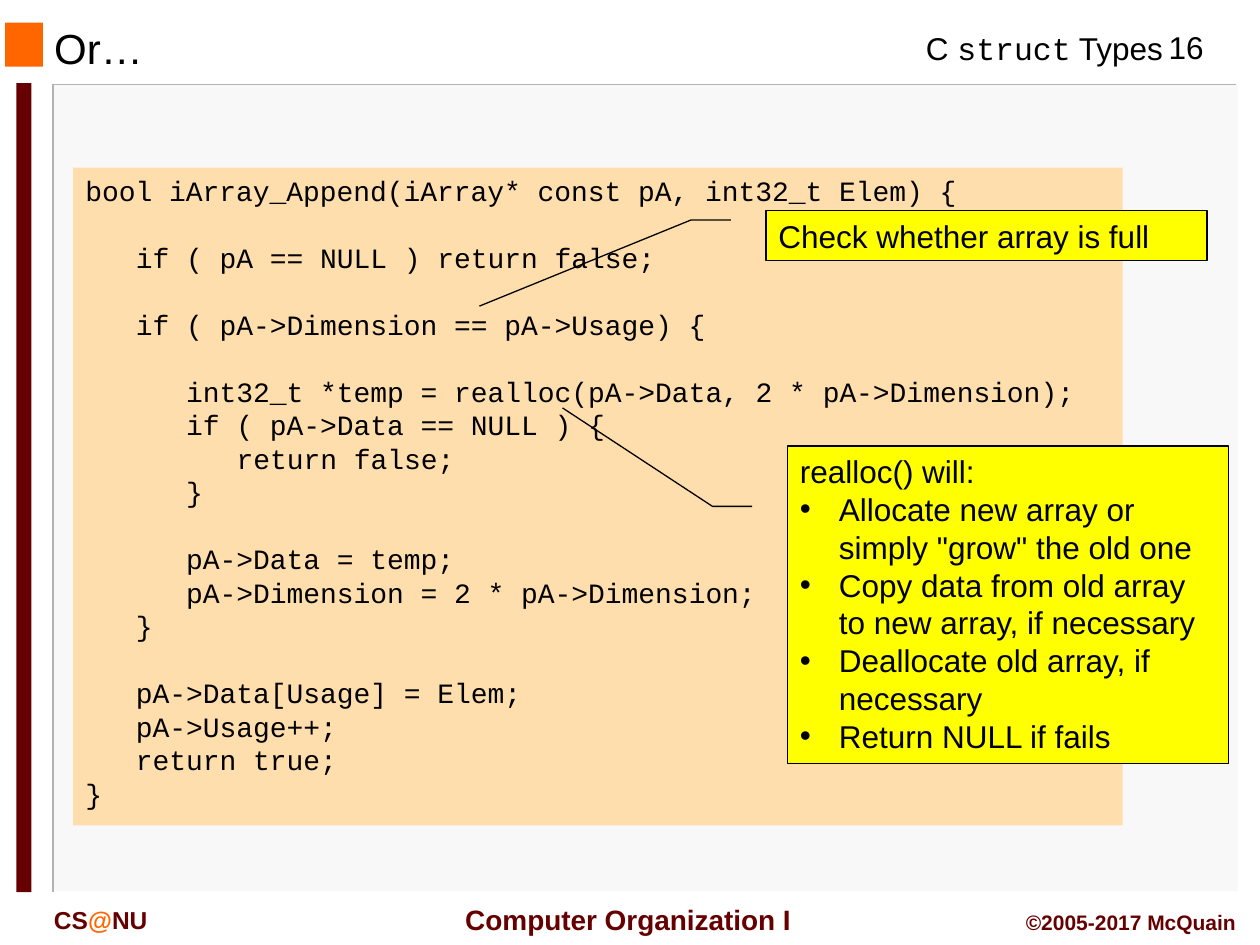
from dataclasses import dataclass

from pptx import Presentation
from pptx import util as u
from pptx.dml.color import RGBColor
from pptx.enum import shapes, text
from pptx.oxml.ns import qn
from lxml import etree

PX = u.Inches(1) // 100

BLACK = RGBColor(0x00, 0x00, 0x00)
WHITE = RGBColor(0xFF, 0xFF, 0xFF)
PANEL = RGBColor(0xF8, 0xF8, 0xF8)
GRAY = RGBColor(0xB2, 0xB2, 0xB2)
ORANGE = RGBColor(0xFF, 0x66, 0x00)
MAROON = RGBColor(0x66, 0x00, 0x00)
PEACH = RGBColor(0xFF, 0xDE, 0xAD)
YELLOW = RGBColor(0xFF, 0xFF, 0x00)

SANS = "Arial"
MONO = "Courier New"
LEFT, CENTER, RIGHT = text.PP_ALIGN.LEFT, text.PP_ALIGN.CENTER, text.PP_ALIGN.RIGHT
TOP, MIDDLE = text.MSO_ANCHOR.TOP, text.MSO_ANCHOR.MIDDLE
CODE_INDENT = 40
CODE_GAP = 19
BULLET_INDENT = 31


@dataclass(frozen=True)
class Box:
    left: int
    top: int
    width: int
    height: int

    def emu(self) -> tuple[int, ...]:
        return tuple(v * PX for v in (self.left, self.top, self.width, self.height))


@dataclass(frozen=True)
class Run:
    words: str
    font: str | None = None
    color: RGBColor | None = None


@dataclass(frozen=True)
class Line:
    runs: tuple[Run, ...]
    indent: int = 0
    gap: int = 0
    bullet: bool = False


@dataclass(frozen=True)
class Label:
    box: Box
    runs: tuple[Run, ...]
    size: int
    color: RGBColor = BLACK
    bold: bool = False
    align: text.PP_ALIGN = LEFT
    anchor: text.MSO_ANCHOR = TOP
    wrap: bool = True


@dataclass(frozen=True)
class Callout:
    box: Box
    target: tuple[float, float]
    lines: tuple[Line, ...]


def plain(words: str, **layout) -> Line:
    return Line((Run(words),), **layout)


def code(level: int, words: str, gap: int = 0) -> Line:
    return plain(words, indent=level * CODE_INDENT, gap=gap)


def bullet(words: str) -> Line:
    return plain(words, indent=BULLET_INDENT, bullet=True)


FRAMES = (
    (GRAY, ((981, 67), (42, 67), (42, 708))),
    (WHITE, ((983, 67), (983, 708), (44, 708))),
)
BLOCKS = (
    (Box(4, 18, 30, 35), ORANGE),
    (Box(13, 66, 12, 642), MAROON),
)
LABELS = (
    Label(Box(725, 18, 210, 40), (Run("C "), Run("struct", font=MONO), Run(" Types")),
          18, wrap=False),
    Label(Box(350, 711, 291, 37), (Run(" Computer Organization I"),), 16, MAROON,
          bold=True, align=CENTER, anchor=MIDDLE, wrap=False),
    Label(Box(908, 17, 67, 40), (Run("16"),), 18, align=CENTER),
    Label(Box(33, 713, 150, 33), (Run("CS"), Run("@", color=ORANGE), Run("NU")), 14,
          MAROON, bold=True),
    Label(Box(783, 717, 208, 30), (Run("©2005-2017 McQuain"),), 12, MAROON,
          bold=True, align=RIGHT),
)
CODE = (
    code(0, "bool iArray_Append(iArray* const pA, int32_t Elem) {"),
    code(1, "if ( pA == NULL ) return false;", CODE_GAP),
    code(1, "if ( pA->Dimension == pA->Usage) {", CODE_GAP),
    code(2, "int32_t *temp = realloc(pA->Data, 2 * pA->Dimension);", CODE_GAP),
    code(2, "if ( pA->Data == NULL ) {"),
    code(3, "return false;"),
    code(2, "}"),
    code(2, "pA->Data = temp;", CODE_GAP),
    code(2, "pA->Dimension = 2 * pA->Dimension;"),
    code(1, "}"),
    code(1, "pA->Data[Usage] = Elem;", CODE_GAP),
    code(1, "pA->Usage++;"),
    code(1, "return true;"),
    code(0, "}"),
)
CALLOUTS = (
    Callout(Box(608, 167, 350, 40), (1.9, -0.65), (plain("Check whether array is full"),)),
    Callout(Box(625, 354, 350, 252), (-0.12, -0.51), (
        plain("realloc() will:"),
        bullet("Allocate new array or simply \"grow\" the old one"),
        bullet("Copy data from old array to new array, if necessary"),
        bullet("Deallocate old array, if necessary"),
        bullet("Return NULL if fails"),
    )),
)


def write(frame, lines: tuple[Line, ...], *, size: int, font: str = SANS,
          color: RGBColor = BLACK, bold: bool = False, align=LEFT, anchor=TOP,
          wrap: bool = True) -> None:
    frame.word_wrap = wrap
    frame.vertical_anchor = anchor
    frame.auto_size = text.MSO_AUTO_SIZE.NONE
    for number, line in enumerate(lines):
        paragraph = frame.add_paragraph() if number else frame.paragraphs[0]
        paragraph.alignment = align
        if line.gap:
            paragraph.space_before = u.Pt(line.gap)
        if line.indent:
            properties = paragraph._p.get_or_add_pPr()
            properties.set("marL", str(line.indent * PX))
            if line.bullet:
                properties.set("indent", str(-line.indent * PX))
                etree.SubElement(properties, qn("a:buFont"), typeface=SANS)
                etree.SubElement(properties, qn("a:buChar"), char="•")
        for part in line.runs:
            run = paragraph.add_run()
            run.text = part.words
            run.font.name = part.font or font
            run.font.size = u.Pt(size)
            run.font.bold = bold
            run.font.color.rgb = part.color or color


def add_block(slide, box: Box, fill: RGBColor, kind=shapes.MSO_SHAPE.RECTANGLE,
              outline: RGBColor | None = None):
    block = slide.shapes.add_shape(kind, *box.emu())
    block.shadow.inherit = False
    block.fill.solid()
    block.fill.fore_color.rgb = fill
    if outline is None:
        block.line.fill.background()
    else:
        block.line.color.rgb = outline
        block.line.width = u.Pt(0.75)
    return block


def add_frame(slide, color: RGBColor, points: tuple[tuple[int, int], ...]) -> None:
    builder = slide.shapes.build_freeform(*points[0], scale=PX)
    builder.add_line_segments(points[1:], close=False)
    edge = builder.convert_to_shape()
    edge.shadow.inherit = False
    edge.fill.background()
    edge.line.color.rgb = color
    edge.line.width = u.Pt(1)


def add_label(slide, label: Label) -> None:
    words = slide.shapes.add_textbox(*label.box.emu())
    write(words.text_frame, (Line(label.runs),), size=label.size, color=label.color,
          bold=label.bold, align=label.align, anchor=label.anchor, wrap=label.wrap)


def add_callout(slide, callout: Callout) -> None:
    note = add_block(slide, callout.box, YELLOW, shapes.MSO_SHAPE.LINE_CALLOUT_2, BLACK)
    for index, value in enumerate((0.19, -0.08, 0.19, -0.17, *callout.target)):
        note.adjustments[index] = value
    write(note.text_frame, callout.lines, size=18)


def main() -> None:
    deck = Presentation()
    deck.slide_width, deck.slide_height = 1000 * PX, 750 * PX
    slide = deck.slides.add_slide(deck.slide_layouts[5])

    add_block(slide, Box(43, 67, 940, 641), PANEL)
    for color, points in FRAMES:
        add_frame(slide, color, points)
    for box, fill in BLOCKS:
        add_block(slide, box, fill)
    for label in LABELS:
        add_label(slide, label)

    title = slide.shapes.title
    title.left, title.top, title.width, title.height = Box(33, 19, 633, 38).emu()
    write(title.text_frame, (plain("Or…"),), size=24, anchor=MIDDLE)

    listing = add_block(slide, Box(58, 133, 833, 522), PEACH)
    write(listing.text_frame, CODE, size=16, font=MONO)
    for callout in CALLOUTS:
        add_callout(slide, callout)

    deck.save("out.pptx")


if __name__ == "__main__":
    main()
